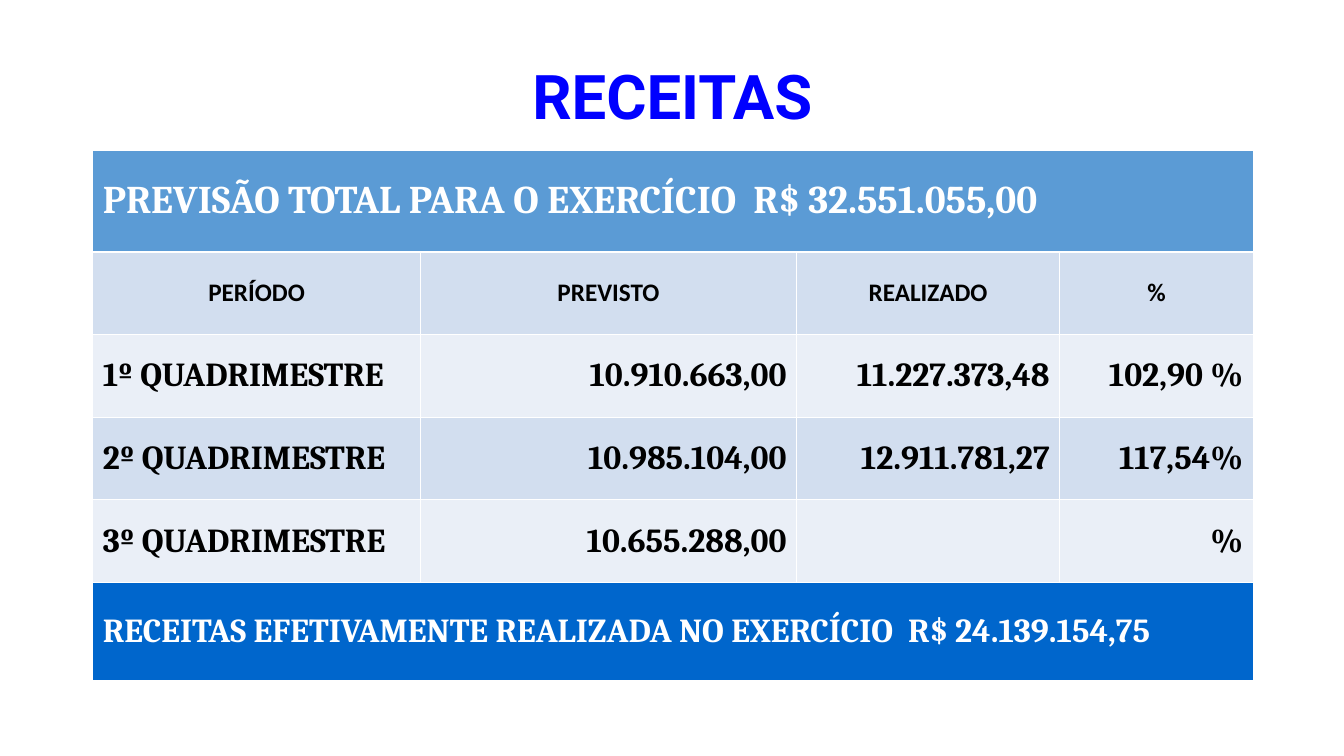
from pptx import Presentation
from pptx.dml.color import RGBColor
from pptx.enum.text import MSO_ANCHOR, PP_ALIGN
from pptx.util import Inches, Pt

LEFT, CENTER, RIGHT = PP_ALIGN.LEFT, PP_ALIGN.CENTER, PP_ALIGN.RIGHT
MIDDLE = MSO_ANCHOR.MIDDLE

BLUE = RGBColor(0x00, 0x00, 0xFF)
WHITE = RGBColor(0xFF, 0xFF, 0xFF)
BLACK = RGBColor(0x00, 0x00, 0x00)
HEADER = RGBColor(0x5B, 0x9B, 0xD5)
TOTAL = RGBColor(0x00, 0x66, 0xCC)
BAND_DARK = RGBColor(0xD2, 0xDE, 0xEF)
BAND_LIGHT = RGBColor(0xEA, 0xEF, 0xF7)


def write(tf, text, size=24, font="Cambria", color=BLACK, align=LEFT):
    p = tf.paragraphs[0]
    p.alignment = align
    r = p.add_run()
    r.text = text
    r.font.size = Pt(size)
    r.font.name = font
    r.font.bold = True
    r.font.color.rgb = color
    return p


prs = Presentation()
prs.slide_width, prs.slide_height = Inches(13.33), Inches(7.5)
s = prs.slides.add_slide(prs.slide_layouts[5])

title = s.shapes.title
title.left, title.top = Inches(0.92), Inches(0.4)
title.width, title.height = Inches(11.5), Inches(1.18)
title.text_frame.vertical_anchor = MIDDLE
p = write(title.text_frame, "RECEITAS", size=44, font="Roboto", color=BLUE, align=CENTER)
p.line_spacing = 0.9

rows = [
    ["PREVISÃO TOTAL PARA O EXERCÍCIO  R$ 32.551.055,00"],
    ["PERÍODO", "PREVISTO", "REALIZADO", "%"],
    ["1º QUADRIMESTRE", "10.910.663,00", "11.227.373,48", "102,90 %"],
    ["2º QUADRIMESTRE", "10.985.104,00", " 12.911.781,27", "117,54%"],
    ["3º QUADRIMESTRE", "10.655.288,00", "", "%"],
    ["RECEITAS EFETIVAMENTE REALIZADA NO EXERCÍCIO  R$ 24.139.154,75"],
]
fills = [HEADER, BAND_DARK, BAND_LIGHT, BAND_DARK, BAND_LIGHT, TOTAL]
heights = [1.01, 0.82, 0.82, 0.82, 0.82, 0.97]
widths = [3.25, 3.73, 2.61, 1.92]

table = s.shapes.add_table(len(rows), len(widths), Inches(0.92), Inches(1.49),
                           Inches(11.5), Inches(5.27)).table
for column, width in zip(table.columns, widths):
    column.width = Inches(width)

for i, (texts, fill, height) in enumerate(zip(rows, fills, heights)):
    table.rows[i].height = Inches(height)
    if len(texts) == 1:
        table.cell(i, 0).merge(table.cell(i, len(widths) - 1))
    for j, text in enumerate(texts):
        cell = table.cell(i, j)
        cell.fill.solid()
        cell.fill.fore_color.rgb = fill
        cell.vertical_anchor = MIDDLE
        if not text:
            continue
        if i == 0:
            write(cell.text_frame, text, size=28, color=WHITE)
        elif i == 1:
            write(cell.text_frame, text, size=18, font="Calibri", align=CENTER)
        elif len(texts) == 1:
            write(cell.text_frame, text, color=WHITE)
        else:
            write(cell.text_frame, text, align=RIGHT if j else LEFT)

prs.save("out.pptx")
